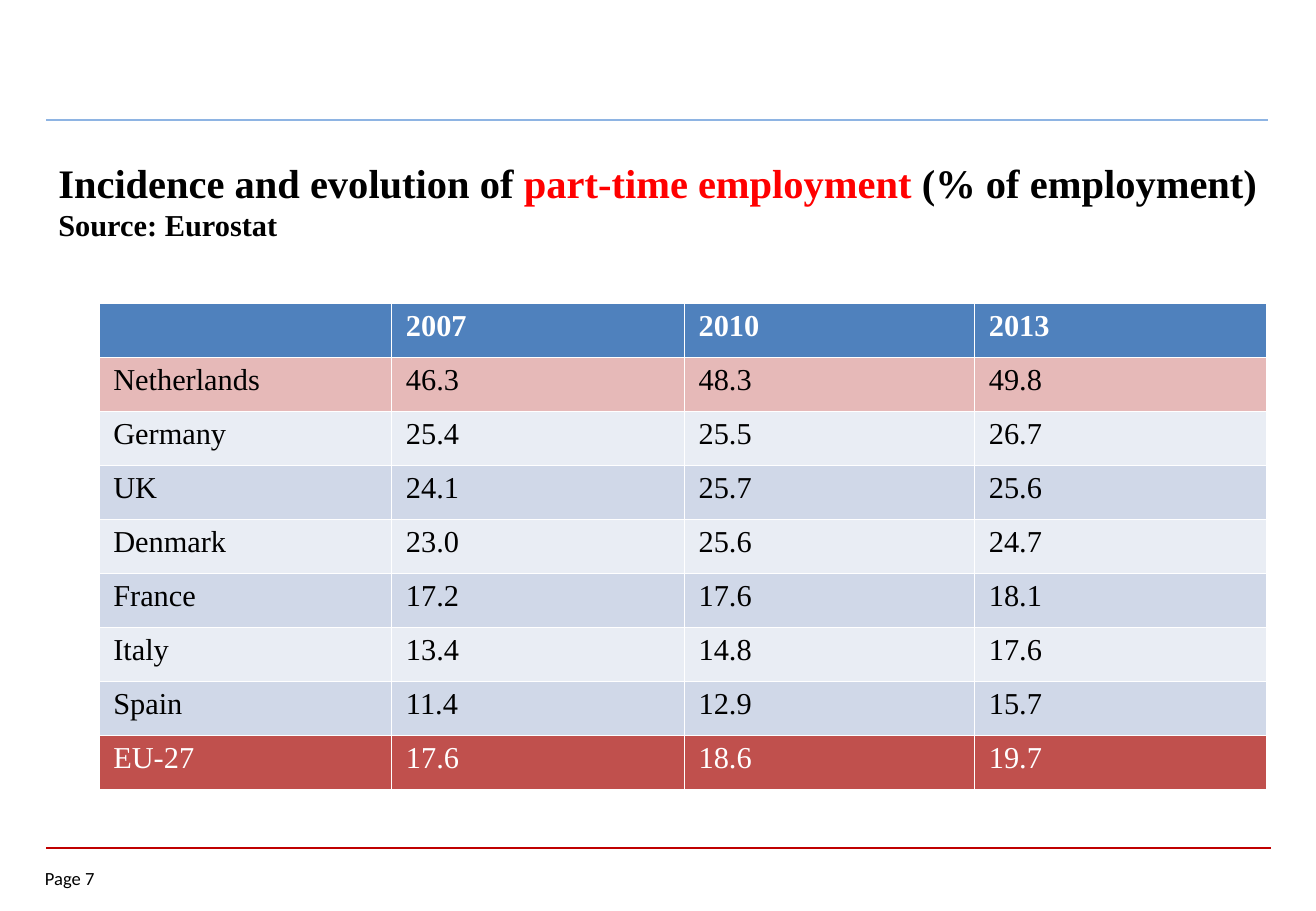
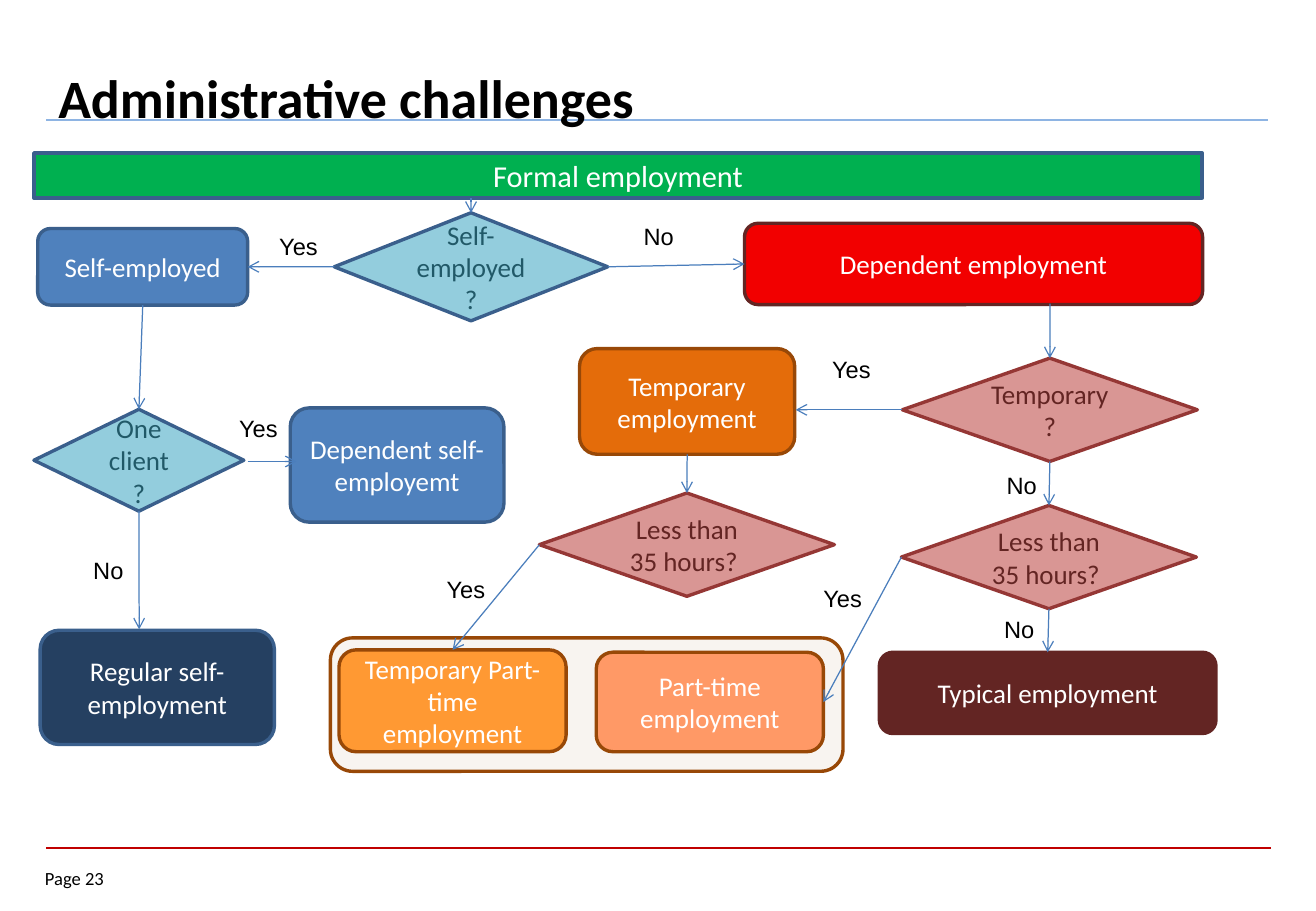
"""Builds two slides: a part-time employment table and a decision tree of employment forms."""
import pptx
import pptx.dml.color
import pptx.enum.shapes
import pptx.enum.text
import pptx.oxml.ns
import pptx.oxml.xmlchemy
import pptx.util

Cm = pptx.util.Cm
Pt = pptx.util.Pt
RGBColor = pptx.dml.color.RGBColor
SHAPE = pptx.enum.shapes.MSO_SHAPE
MIDDLE = pptx.enum.text.MSO_ANCHOR.MIDDLE
CENTER = pptx.enum.text.PP_ALIGN.CENTER
OxmlElement = pptx.oxml.xmlchemy.OxmlElement
qn = pptx.oxml.ns.qn

BLACK = RGBColor(0x00, 0x00, 0x00)
WHITE = RGBColor(0xFF, 0xFF, 0xFF)
HIGHLIGHT = RGBColor(0xFF, 0x00, 0x00)
HEADER_RULE = RGBColor(0x8E, 0xB4, 0xE3)
FOOTER_RULE = RGBColor(0xC0, 0x00, 0x00)
ARROW = RGBColor(0x4B, 0x7E, 0xBC)
BLUE = RGBColor(0x4F, 0x81, 0xBD)
BLUE_EDGE = RGBColor(0x3A, 0x5F, 0x8C)
NAVY = RGBColor(0x25, 0x40, 0x61)
AQUA = RGBColor(0x93, 0xCD, 0xDD)
TEAL = RGBColor(0x21, 0x59, 0x68)
GREEN = RGBColor(0x00, 0xB0, 0x50)
RED = RGBColor(0xF2, 0x00, 0x00)
MAROON = RGBColor(0x63, 0x25, 0x23)
ROSE = RGBColor(0xD9, 0x96, 0x94)
ROSE_EDGE = RGBColor(0x95, 0x37, 0x35)
ORANGE = RGBColor(0xE4, 0x6C, 0x0A)
AMBER = RGBColor(0xFF, 0x99, 0x33)
SALMON = RGBColor(0xFF, 0x99, 0x66)
BROWN = RGBColor(0x98, 0x48, 0x07)
GROUP_TINT = RGBColor(0x93, 0x46, 0x07)
ROW_PINK = RGBColor(0xE6, 0xB9, 0xB8)
ROW_LIGHT = RGBColor(0xE9, 0xED, 0xF4)
ROW_DARK = RGBColor(0xD0, 0xD8, 0xE8)
ROW_TOTAL = RGBColor(0xC0, 0x50, 0x4D)


def write(frame, text, size=16, font="Calibri", color=BLACK, bold=False, align=None):
    """Append text to the frame's last paragraph; each newline starts a paragraph."""
    for number, line in enumerate(text.split("\n")):
        paragraph = frame.add_paragraph() if number else frame.paragraphs[-1]
        paragraph.alignment = align
        if line:
            run = paragraph.add_run()
            run.text = line
            run.font.size = Pt(size)
            run.font.name = font
            run.font.bold = bold
            run.font.color.rgb = color


def draw_line(slide, start, end, color, width):
    """Draw a straight line between two points in centimetres."""
    line = slide.shapes.add_connector(
        pptx.enum.shapes.MSO_CONNECTOR.STRAIGHT, *[Cm(value) for value in start + end])
    line.line.color.rgb = color
    line.line.width = Pt(width)
    line._element.spPr.append(OxmlElement("a:effectLst"))
    return line


deck = pptx.Presentation()
deck.slide_width = Cm(27.52)
deck.slide_height = Cm(19.05)

slides = []
titles = []
for page, title_place in (("Page 7", (0.97, 2.92, 26.31, 2.54)),
                          ("Page 23", (0.97, 1.12, 25.2, 1.8))):
    slide = deck.slides.add_slide(deck.slide_layouts[6])
    draw_line(slide, (0.97, 17.73), (26.57, 17.73), FOOTER_RULE, 1)
    draw_line(slide, (0.97, 2.51), (26.52, 2.51), HEADER_RULE, 1.5)
    footer = slide.shapes.add_textbox(Cm(0.94), Cm(18.14), Cm(1.85), Cm(0.56)).text_frame
    footer.margin_left = footer.margin_right = footer.margin_top = footer.margin_bottom = 0
    write(footer, page, size=11)
    title = slide.shapes.add_textbox(*[Cm(value) for value in title_place]).text_frame
    title.word_wrap = True
    title.vertical_anchor = MIDDLE
    slides.append(slide)
    titles.append(title)
incidence, challenges = slides

SERIF = "Times New Roman"
write(titles[0], "Incidence and evolution of ", size=24, font=SERIF, bold=True)
write(titles[0], "part-time employment ", size=24, font=SERIF, color=HIGHLIGHT, bold=True)
write(titles[0], "(% of employment)", size=24, font=SERIF, bold=True)
write(titles[0], "\nSource: Eurostat", size=18, font=SERIF, bold=True)
write(titles[1], "Administrative challenges", size=32, bold=True)

part_time_rates = [
    (("", "2007", "2010", "2013"), BLUE, WHITE),
    (("Netherlands", "46.3", "48.3", "49.8"), ROW_PINK, BLACK),
    (("Germany", "25.4", "25.5", "26.7"), ROW_LIGHT, BLACK),
    (("UK", "24.1", "25.7", "25.6"), ROW_DARK, BLACK),
    (("Denmark", "23.0", "25.6", "24.7"), ROW_LIGHT, BLACK),
    (("France", "17.2", "17.6", "18.1"), ROW_DARK, BLACK),
    (("Italy", "13.4", "14.8", "17.6"), ROW_LIGHT, BLACK),
    (("Spain", "11.4", "12.9", "15.7"), ROW_DARK, BLACK),
    (("EU-27", "17.6", "18.6", "19.7"), ROW_TOTAL, WHITE),
]
rates = incidence.shapes.add_table(
    len(part_time_rates), 4, Cm(2.07), Cm(6.35), Cm(24.41), Cm(10.17)).table
for column, width in zip(rates.columns, (6.12, 6.12, 6.07, 6.1)):
    column.width = Cm(width)
for row, (values, fill, ink) in enumerate(part_time_rates):
    rates.rows[row].height = Cm(1.13)
    for column, value in enumerate(values):
        cell = rates.cell(row, column)
        cell.fill.solid()
        cell.fill.fore_color.rgb = fill
        cell.margin_left = cell.margin_right = Cm(0.3)
        cell.margin_top = cell.margin_bottom = Cm(0.13)
        write(cell.text_frame, value, size=18, font=SERIF, color=ink, bold=row == 0)

BAR = SHAPE.FLOWCHART_PROCESS
ROUND = SHAPE.ROUNDED_RECTANGLE
DECISION = SHAPE.FLOWCHART_DECISION
steps = [
    ("part-time group", "", ROUND, (6.91, 13.34, 10.72, 2.79), GROUP_TINT, BROWN, WHITE),
    ("formal", "Formal employment", BAR, (0.71, 3.2, 24.43, 0.94), GREEN, BLUE_EDGE, WHITE),
    ("self-employed?", "Self-employed?", DECISION, (6.99, 4.45, 5.72, 2.26), AQUA, BLUE_EDGE, TEAL),
    ("self-employed", "Self-employed", ROUND, (0.79, 4.78, 4.39, 1.6), BLUE, BLUE_EDGE, WHITE),
    ("dependent", "Dependent employment", ROUND, (15.57, 4.67, 9.58, 1.7), RED, MAROON, WHITE),
    ("one client?", "One client\n?", DECISION, (0.71, 8.56, 4.39, 2.13), AQUA, BLUE_EDGE, TEAL),
    ("dependent self", "Dependent self-employemt", ROUND, (6.07, 8.53, 4.47, 2.39), BLUE, BLUE_EDGE, WHITE),
    ("regular self", "Regular self-employment", ROUND, (0.84, 13.18, 4.9, 2.39), NAVY, BLUE_EDGE, WHITE),
    ("permanent hours?", "Less than 35 hours? ", DECISION, (18.85, 10.57, 6.17, 2.16), ROSE, ROSE_EDGE, MAROON),
    ("temporary", "Temporary employment", ROUND, (12.12, 7.29, 4.5, 2.21), ORANGE, BROWN, WHITE),
    ("temporary?", "Temporary?", DECISION, (18.87, 7.49, 6.17, 2.16), ROSE, ROSE_EDGE, MAROON),
    ("typical", "Typical employment", ROUND, (18.39, 13.64, 7.04, 1.7), MAROON, MAROON, WHITE),
    ("part-time", "Part-time employment", ROUND, (12.47, 13.64, 4.75, 2.08), SALMON, BROWN, WHITE),
    ("temporary hours?", "Less than 35 hours? ", DECISION, (11.28, 10.31, 6.17, 2.16), ROSE, ROSE_EDGE, MAROON),
    ("temporary part-time", "Temporary Part-time employment", ROUND, (7.09, 13.59, 4.75, 2.13), AMBER, BROWN, WHITE),
]
placed = {}
for key, text, outline, place, fill, edge, ink in steps:
    step = challenges.shapes.add_shape(outline, *[Cm(value) for value in place])
    step.shadow.inherit = False
    step.fill.solid()
    step.fill.fore_color.rgb = fill
    if key == "part-time group":
        alpha = OxmlElement("a:alpha")
        alpha.set("val", "6000")
        step._element.spPr.find(qn("a:solidFill"))[0].append(alpha)
    step.line.color.rgb = edge
    step.line.width = Pt(2)
    step.text_frame.word_wrap = True
    step.text_frame.vertical_anchor = MIDDLE
    write(step.text_frame, text, size=18 if key == "formal" else 16, color=ink, align=CENTER)
    placed[key] = step

TOP, LEFT, BOTTOM, RIGHT = range(4)
arrows = [
    ((9.85, 4.14), ("self-employed?", TOP)),
    (("self-employed?", RIGHT), ("dependent", LEFT)),
    (("self-employed?", LEFT), ("self-employed", RIGHT)),
    (("self-employed", BOTTOM), ("one client?", TOP)),
    ((5.18, 9.65), (6.2, 9.65)),
    (("one client?", BOTTOM), (2.91, 13.16)),
    ((21.96, 6.35), ("temporary?", TOP)),
    (("temporary?", LEFT), (16.64, 8.57)),
    (("temporary?", BOTTOM), ("permanent hours?", TOP)),
    (("temporary", BOTTOM), ("temporary hours?", TOP)),
    (("permanent hours?", LEFT), ("part-time", RIGHT)),
    (("permanent hours?", BOTTOM), ("typical", TOP)),
    (("temporary hours?", LEFT), ("temporary part-time", TOP)),
]
for start, end in arrows:
    joins_start, joins_end = start[0] in placed, end[0] in placed
    arrow = draw_line(challenges, (0, 0) if joins_start else start,
                      (0, 0) if joins_end else end, ARROW, 0.75)
    if joins_start:
        arrow.begin_connect(placed[start[0]], start[1])
    if joins_end:
        arrow.end_connect(placed[end[0]], end[1])
    head = OxmlElement("a:tailEnd")
    head.set("type", "arrow")
    arrow._element.spPr.find(qn("a:ln")).append(head)

answers = {
    "Yes": (1.32, [(5.59, 4.72), (4.75, 8.53), (17.15, 7.29), (16.97, 12.09), (9.09, 11.89)]),
    "No": (1.14, [(13.21, 4.52), (1.7, 11.51), (20.8, 9.73), (20.75, 12.73)]),
}
for answer, (width, spots) in answers.items():
    for left, top in spots:
        label = challenges.shapes.add_textbox(Cm(left), Cm(top), Cm(width), Cm(0.86)).text_frame
        label.word_wrap = False
        write(label, answer, size=14, font="Arial")

deck.save("out.pptx")
